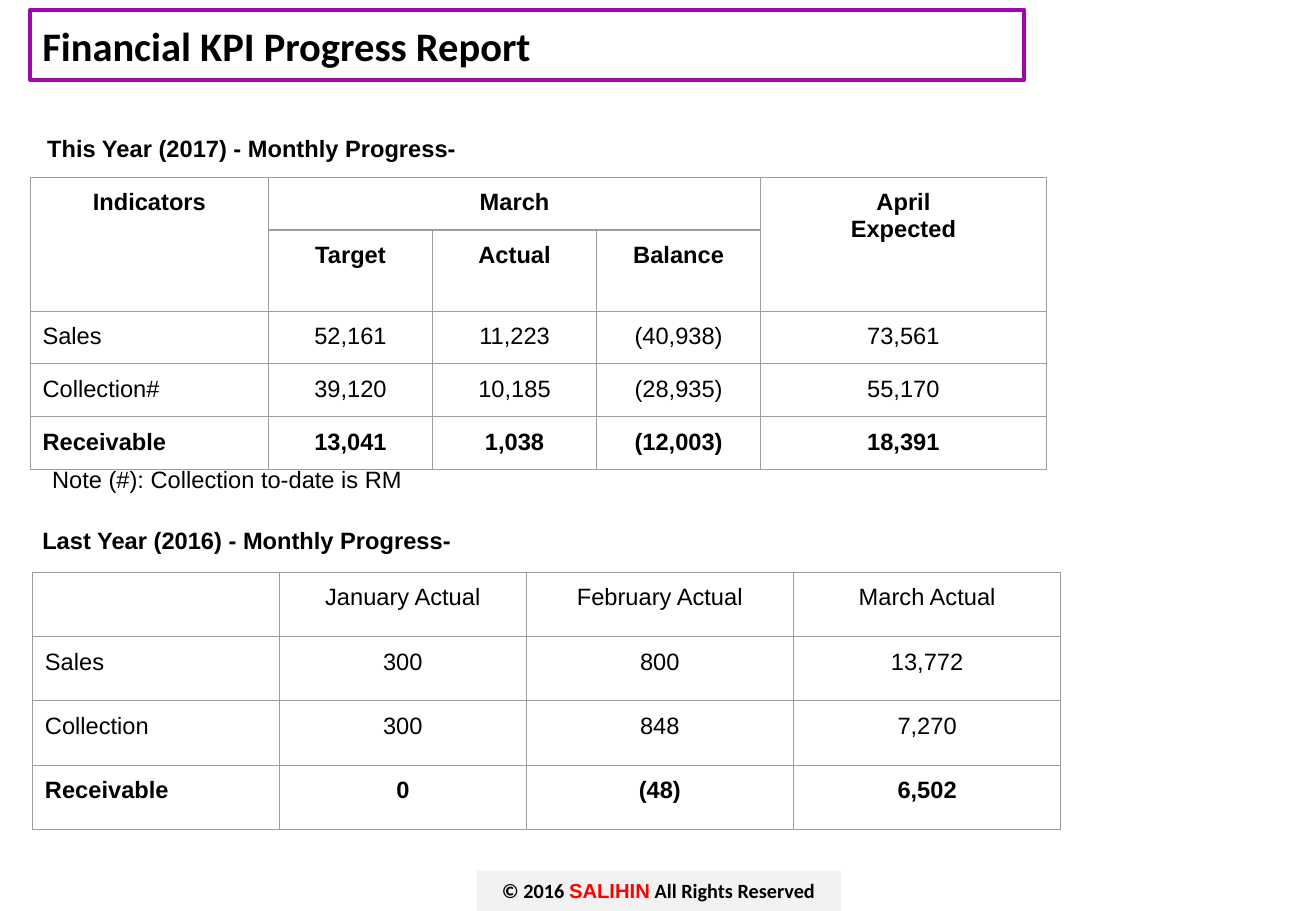
from lxml.etree import SubElement
from pptx import Presentation
from pptx.dml.color import RGBColor
from pptx.enum.shapes import MSO_SHAPE
from pptx.enum.text import MSO_ANCHOR, PP_ALIGN
from pptx.oxml.ns import qn
from pptx.util import Inches, Pt

BLACK = RGBColor(0, 0, 0)
RED = RGBColor(0xFF, 0, 0)
PURPLE = RGBColor(0x9C, 0x08, 0xAC)
PALE = RGBColor(0xF2, 0xF2, 0xF2)
GREY = RGBColor(0x9E, 0x9E, 0x9E)

THIS_YEAR = [
    ["Indicators", "March", "", "", "April\nExpected"],
    ["", "Target", "Actual", "Balance", ""],
    ["Sales", "52,161", "11,223", "(40,938)", "73,561"],
    ["Collection#", "39,120", "10,185", "(28,935)", "55,170"],
    ["Receivable", "13,041", "1,038", "(12,003)", "18,391"],
]
LAST_YEAR = [
    ["", "January Actual", "February Actual", "March Actual"],
    ["Sales", "300", "800", "13,772"],
    ["Collection", "300", "848", "7,270"],
    ["Receivable", "0", "(48)", "6,502"],
]


def write(frame, text, size=14, font="Arial", bold=False, align=PP_ALIGN.LEFT):
    """Fill a frame with lines; a line is a string or a list of (text, font, colour)."""
    lines = text.split("\n") if isinstance(text, str) else [text]
    for i, line in enumerate(lines):
        par = frame.add_paragraph() if i else frame.paragraphs[0]
        par.alignment = align
        for part, face, tint in [(line, font, BLACK)] if isinstance(line, str) else line:
            run = par.add_run()
            run.text = part
            run.font.size = Pt(size)
            run.font.name = face
            run.font.bold = bold
            run.font.color.rgb = tint


def add_box(slide, box, fill=None, line=None):
    """Add a plain rectangle and return its text frame."""
    shape = slide.shapes.add_shape(MSO_SHAPE.RECTANGLE, *map(Inches, box))
    shape.shadow.inherit = False
    if fill is None:
        shape.fill.background()
    else:
        shape.fill.solid()
        shape.fill.fore_color.rgb = fill
    if line is None:
        shape.line.fill.background()
    else:
        shape.line.color.rgb = line
        shape.line.width = Pt(2.25)
    frame = shape.text_frame
    frame.word_wrap = True
    frame.vertical_anchor = MSO_ANCHOR.MIDDLE
    return frame


def add_label(slide, box, text, bold=False):
    frame = slide.shapes.add_textbox(*map(Inches, box)).text_frame
    frame.word_wrap = True
    frame.margin_top = frame.margin_bottom = Inches(0.1)
    write(frame, text, bold=bold)


def add_edges(cell):
    props = cell._tc.get_or_add_tcPr()
    for i, side in enumerate(("a:lnL", "a:lnR", "a:lnT", "a:lnB")):
        edge = SubElement(props, qn(side), w=str(Pt(0.75)))
        fill = SubElement(edge, qn("a:solidFill"))
        SubElement(fill, qn("a:srgbClr"), val=str(GREY))
        props.insert(i, edge)


def add_grid(slide, left, top, data, widths, heights, heads=0, spans=()):
    """Add a table with bold head rows and a bold last row."""
    shape = slide.shapes.add_table(
        len(data), len(widths), Inches(left), Inches(top),
        Inches(sum(widths)), Inches(sum(heights)))
    table = shape.table
    table.first_row = table.horz_banding = False
    for col, width in zip(table.columns, widths):
        col.width = Inches(width)
    for row, height in zip(table.rows, heights):
        row.height = Inches(height)
    for r, texts in enumerate(data):
        for c, text in enumerate(texts):
            cell = table.cell(r, c)
            cell.fill.background()
            cell.margin_left = cell.margin_right = Inches(0.1)
            cell.margin_top = cell.margin_bottom = Inches(0.1)
            add_edges(cell)
            if text:
                left_side = c == 0 and r >= heads
                write(cell.text_frame, text, bold=r < heads or r == len(data) - 1,
                      align=PP_ALIGN.LEFT if left_side else PP_ALIGN.CENTER)
    for start, end in spans:
        table.cell(*start).merge(table.cell(*end))


def add_footer(slide, box):
    parts = [("© 2016 ", "Calibri", BLACK), ("SALIHIN", "Arial", RED),
             (" All Rights Reserved", "Calibri", BLACK)]
    write(add_box(slide, box, fill=PALE), parts, size=12, bold=True,
          align=PP_ALIGN.CENTER)


def add_title(slide, box):
    write(add_box(slide, box, line=PURPLE), "Financial KPI Progress Report",
          size=24, font="Calibri", bold=True)


def add_this_year(slide, left, top):
    add_label(slide, (left + 0.04, top, 5.02, 0.46),
              "This Year (2017) - Monthly Progress-", bold=True)
    add_grid(slide, left, top + 0.46, THIS_YEAR, [1.96] + [1.35] * 3 + [2.35],
             [0.42, 0.63, 0.43, 0.42, 0.42], heads=2,
             spans=[((0, 0), (1, 0)), ((0, 1), (0, 3)), ((0, 4), (1, 4))])
    add_label(slide, (left + 0.08, top + 2.73, 4.06, 0.46),
              "Note (#): Collection to-date is RM")


def add_last_year(slide, left, top):
    add_label(slide, (left, top, 4.23, 0.46),
              "Last Year (2016) - Monthly Progress-", bold=True)
    add_grid(slide, left + 0.02, top + 0.48, LAST_YEAR,
             [2.03, 2.03, 2.2, 2.2], [0.53] * 4)


def main():
    deck = Presentation()
    deck.slide_width, deck.slide_height = Inches(10.83), Inches(7.5)
    slide = deck.slides.add_slide(deck.slide_layouts[6])
    add_footer(slide, (3.92, 7.17, 3, 0.33))
    add_title(slide, (0.25, 0.08, 8.18, 0.58))
    add_this_year(slide, 0.25, 1)
    add_last_year(slide, 0.25, 4.23)
    deck.save("out.pptx")


if __name__ == "__main__":
    main()
